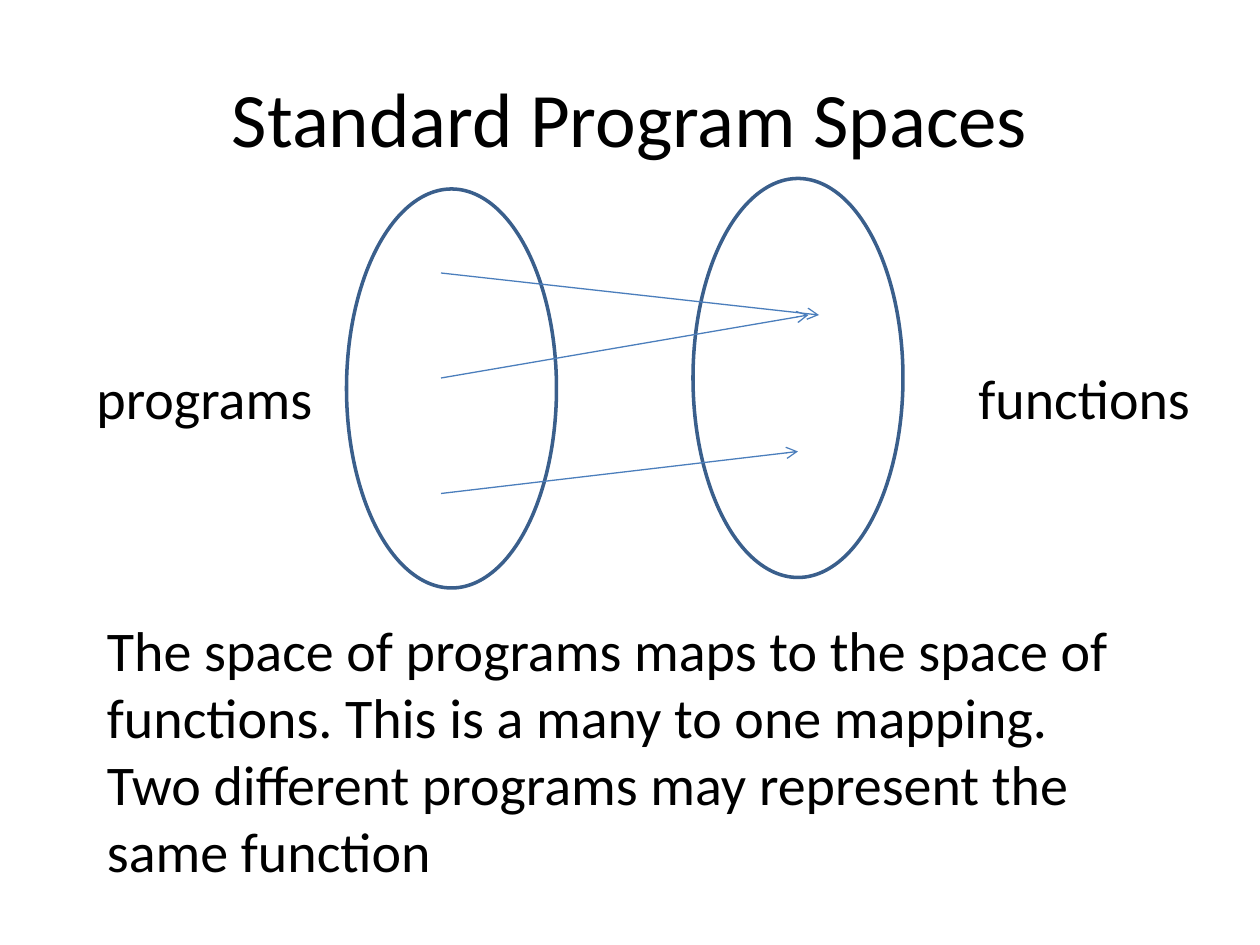
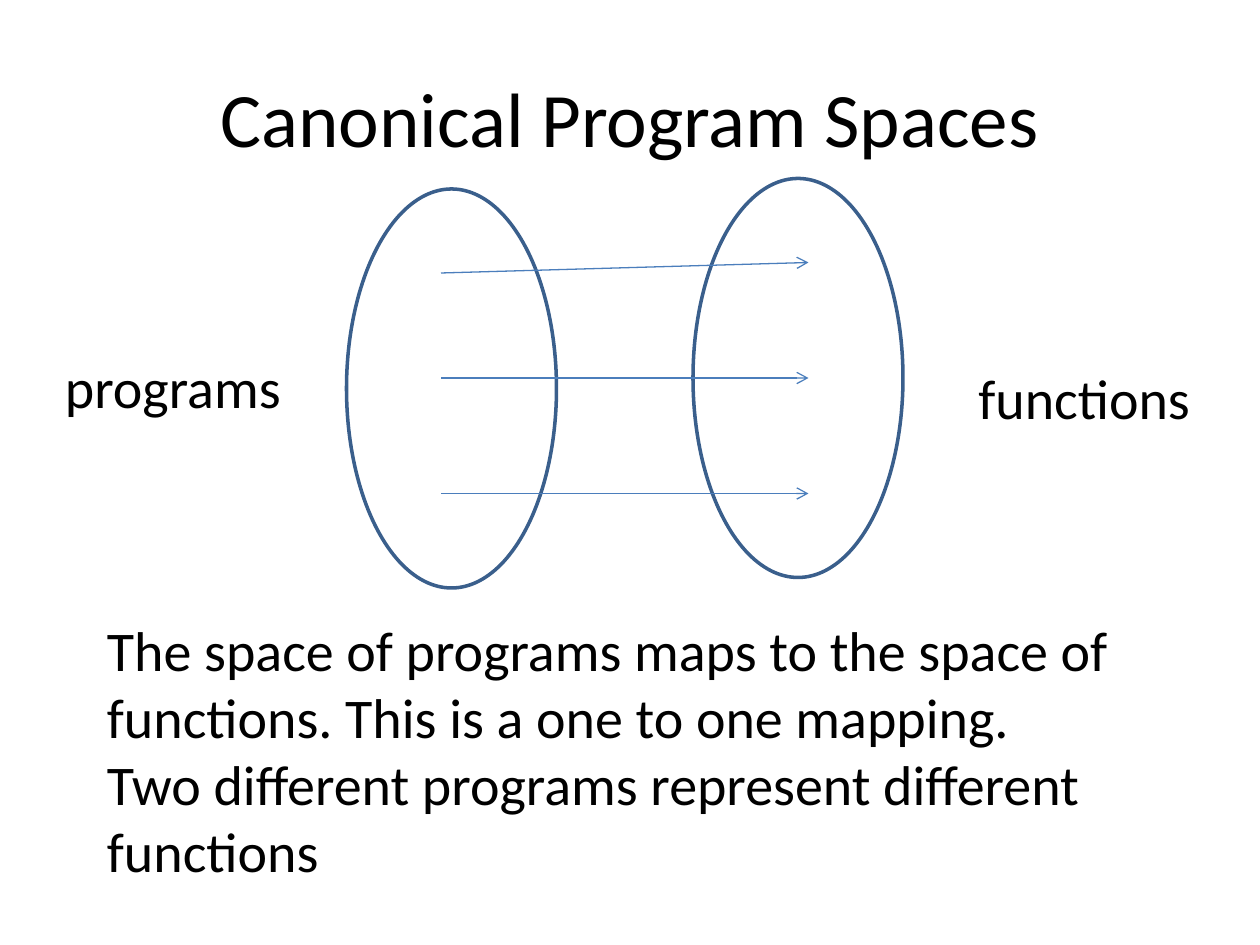
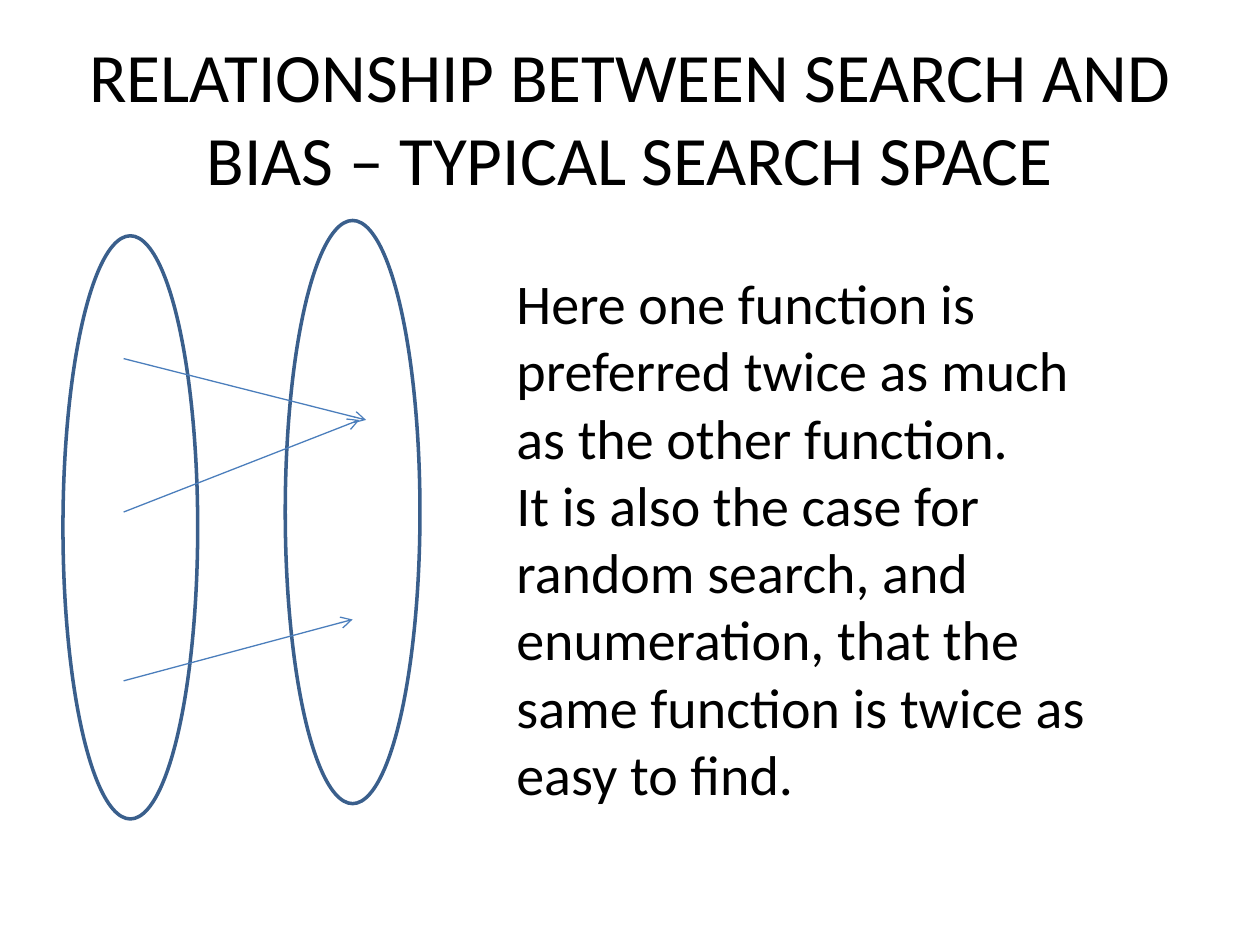
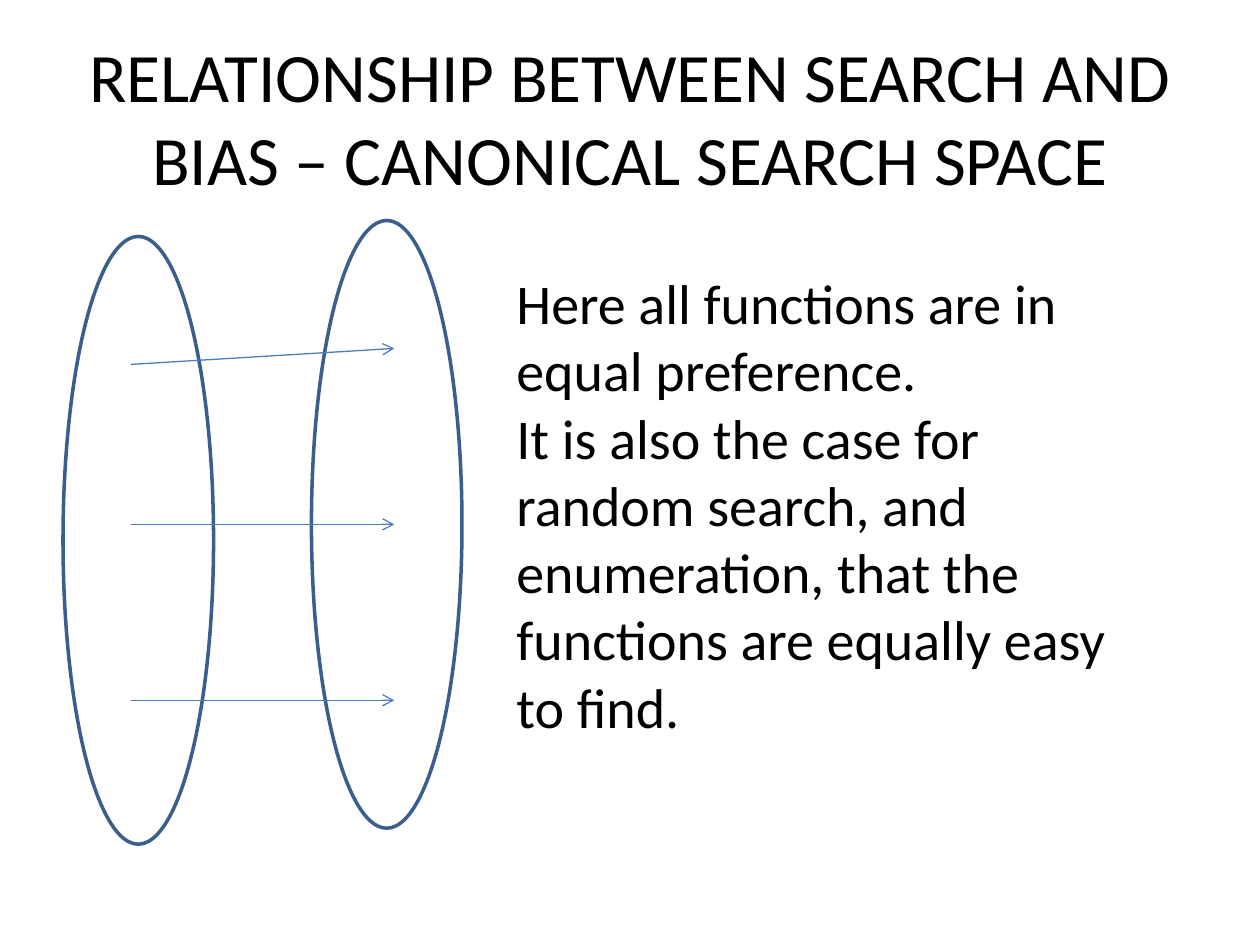
from dataclasses import dataclass

import pptx
import pptx.dml.color
import pptx.enum.shapes
import pptx.enum.text
import pptx.oxml
import pptx.oxml.ns
import pptx.util

# Every length below counts cells of a 120 x 90 grid laid over the slide.
COLUMNS, ROWS = 120, 90
CELL = pptx.util.Inches(10) // COLUMNS


@dataclass(frozen=True)
class Theme:
    font: str = "Calibri"
    text: str = "000000"
    paper: str = "FFFFFF"
    outline: str = "3A5F8C"
    arrow: str = "4B7EBC"
    title_size: float = 44
    long_title_size: float = 39.6
    body_size: float = 32
    outline_width: float = 2
    arrow_width: float = 0.75


THEME = Theme()

TITLE_BOX = (6, 3.6, 108, 15)
BELOW_DIAGRAM = (9, 58, 100, 27.1)
FUNCTIONS_LABEL = ("functions", (92, 34, 22.8, 7.7))

# The mapping diagram: 53 x 39 units, stretched into each slide's frame.
DIAGRAM_SIZE = (53, 39)
SPACE_SIZE = (20, 38)
PROGRAM_SPACE, FUNCTION_SPACE = (0, 1), (33, 0)
PROGRAMS = [(9, 9), (9, 19), (9, 30)]
MANY_TO_ONE = [(45, 13), (44, 13), (43, 26)]
ONE_TO_ONE = [(44, 8), (44, 19), (44, 30)]

SLIDES = [
    dict(
        title="Standard Program Spaces",
        title_size=THEME.title_size,
        frame=(33, 17, 53, 39),
        functions=MANY_TO_ONE,
        labels=[("programs", (8, 34, 23.2, 7.7)), FUNCTIONS_LABEL],
        body_box=BELOW_DIAGRAM,
        body=[
            "The space of programs maps to the space of functions. This is a many to one mapping.",
            "Two different programs may represent the same function",
        ],
    ),
    dict(
        title="Canonical Program Spaces",
        title_size=THEME.title_size,
        frame=(33, 17, 53, 39),
        functions=ONE_TO_ONE,
        labels=[("programs", (5, 33, 23.2, 7.7)), FUNCTIONS_LABEL],
        body_box=BELOW_DIAGRAM,
        body=[
            "The space of programs maps to the space of functions. This is a one to one mapping.",
            "Two different programs represent different functions",
        ],
    ),
    dict(
        title="RELATIONSHIP BETWEEN SEARCH AND BIAS – TYPICAL SEARCH SPACE",
        title_size=THEME.long_title_size,
        frame=(6, 21, 34, 57),
        functions=MANY_TO_ONE,
        labels=[],
        body_box=(48, 25, 59.9, 52.9),
        body=[
            "Here one function is preferred twice as much as the other function.",
            "It is also the case for random search, and enumeration, "
            "that the same function is twice as easy to find.",
        ],
    ),
    dict(
        title="RELATIONSHIP BETWEEN SEARCH AND BIAS – CANONICAL SEARCH SPACE",
        title_size=THEME.long_title_size,
        frame=(6, 21, 38, 59.4),
        functions=ONE_TO_ONE,
        labels=[],
        body_box=(48, 25, 59.9, 46.4),
        body=[
            "Here all functions are in equal preference.",
            "It is also the case for random search, and enumeration, "
            "that the functions are equally easy to find.",
        ],
    ),
]


def cells(lengths):
    return [round(length * CELL) for length in lengths]


def rgb(code):
    return pptx.dml.color.RGBColor.from_string(code)


def write(holder, paragraphs, *, size=THEME.body_size, color=THEME.text, wrap=True,
          align=pptx.enum.text.PP_ALIGN.LEFT,
          anchor=pptx.enum.text.MSO_ANCHOR.TOP,
          fit=pptx.enum.text.MSO_AUTO_SIZE.SHAPE_TO_FIT_TEXT):
    frame = holder.text_frame
    frame.text = "\n".join(paragraphs)
    frame.word_wrap = wrap
    frame.auto_size = fit
    frame.vertical_anchor = anchor
    for paragraph in frame.paragraphs:
        paragraph.alignment = align
        for run in paragraph.runs:
            run.font.name = THEME.font
            run.font.size = pptx.util.Pt(size)
            run.font.color.rgb = rgb(color)


def add_title(slide, title, size):
    heading = slide.shapes.title
    heading.left, heading.top, heading.width, heading.height = cells(TITLE_BOX)
    write(heading, [title], size=size,
          align=pptx.enum.text.PP_ALIGN.CENTER,
          anchor=pptx.enum.text.MSO_ANCHOR.MIDDLE,
          fit=pptx.enum.text.MSO_AUTO_SIZE.NONE)


def add_space(diagram, box):
    space = diagram.shapes.add_shape(pptx.enum.shapes.MSO_SHAPE.OVAL, *cells(box))
    space.shadow.inherit = False
    space.fill.solid()
    space.fill.fore_color.rgb = rgb(THEME.paper)
    space.line.color.rgb = rgb(THEME.outline)
    space.line.width = pptx.util.Pt(THEME.outline_width)


def add_arrow(diagram, start, end):
    arrow = diagram.shapes.add_connector(
        pptx.enum.shapes.MSO_CONNECTOR.STRAIGHT, *cells(start + end))
    arrow.line.color.rgb = rgb(THEME.arrow)
    arrow.line.width = pptx.util.Pt(THEME.arrow_width)
    head = pptx.oxml.parse_xml(
        f'<a:tailEnd {pptx.oxml.ns.nsdecls("a")} type="arrow"/>')
    no_shadow = pptx.oxml.parse_xml(f'<a:effectLst {pptx.oxml.ns.nsdecls("a")}/>')
    arrow.line._get_or_add_ln().append(head)
    arrow._element.spPr.append(no_shadow)


def add_mapping(slide, frame, functions):
    """Draw both spaces and their arrows, stretched to fill the frame."""
    left, top, width, height = frame
    across, down = width / DIAGRAM_SIZE[0], height / DIAGRAM_SIZE[1]

    def place(point):
        return left + point[0] * across, top + point[1] * down

    diagram = slide.shapes.add_group_shape()
    space_size = (SPACE_SIZE[0] * across, SPACE_SIZE[1] * down)
    for corner in (PROGRAM_SPACE, FUNCTION_SPACE):
        add_space(diagram, place(corner) + space_size)
    for program, function in zip(PROGRAMS, functions):
        add_arrow(diagram, place(program), place(function))


def main():
    deck = pptx.Presentation()
    deck.slide_width, deck.slide_height = COLUMNS * CELL, ROWS * CELL
    title_only = deck.slide_layouts.get_by_name("Title Only")
    for content in SLIDES:
        slide = deck.slides.add_slide(title_only)
        add_title(slide, content["title"], content["title_size"])
        add_mapping(slide, content["frame"], content["functions"])
        write(slide.shapes.add_textbox(*cells(content["body_box"])), content["body"])
        for label, box in content["labels"]:
            write(slide.shapes.add_textbox(*cells(box)), [label], wrap=False)
    deck.save("out.pptx")


if __name__ == "__main__":
    main()
